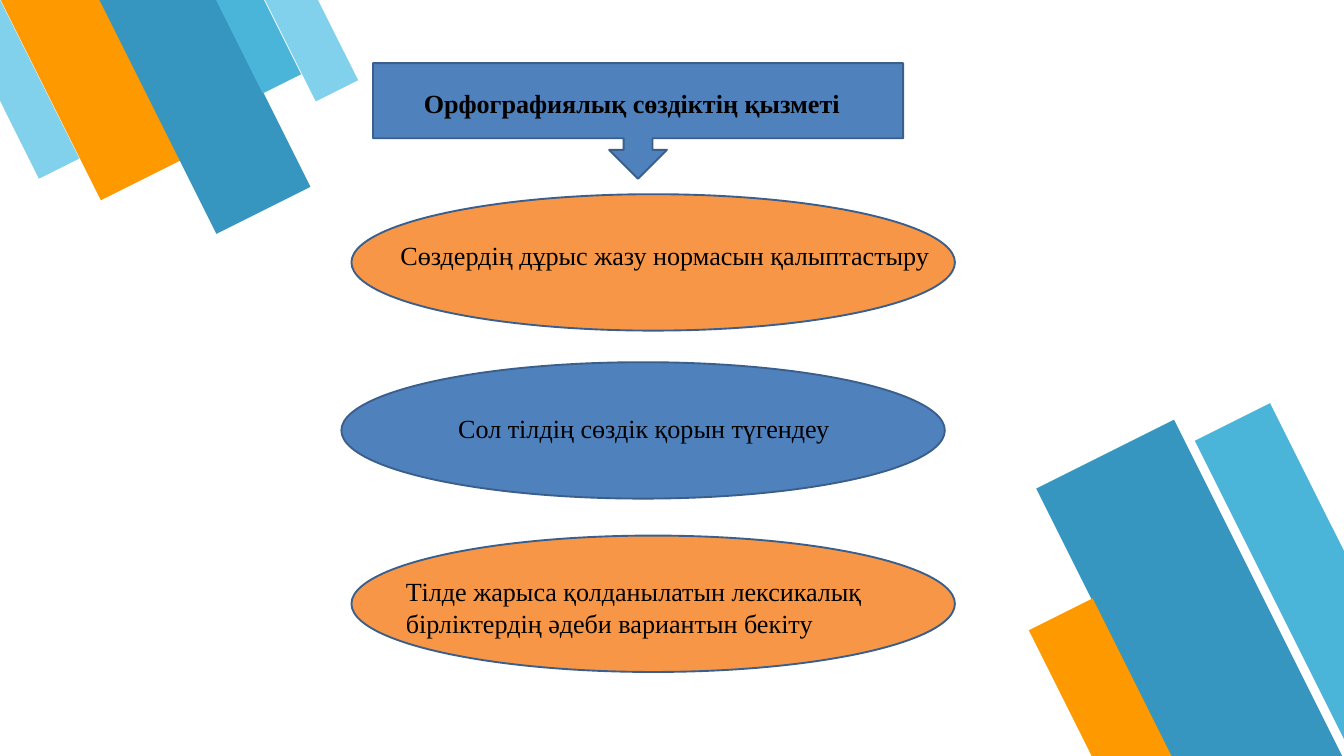
from pptx import Presentation
from pptx.dml.color import RGBColor
from pptx.enum.shapes import MSO_SHAPE as Preset
from pptx.enum.text import MSO_AUTO_SIZE as AutoSize, PP_ALIGN as Align
from pptx.util import Inches, Pt

COLUMNS, ROWS = 20, 11.25  # grid of square cells, one inch each
FONT = "Times New Roman"
BLUE, ORANGE, OUTLINE = "4F81BD", "F79646", "3A5F8C"
AMBER, PALE, TEAL, SKY = "FF9900", "81D1EC", "3796BF", "4BB5D9"

# Outer corner (column, row), columns across the end, colour
TOP_BARS = [
    (1.5, 2.98, 1.2, AMBER),
    (0.58, 2.66, 0.6, PALE),
    (3.22, 3.48, 1.4, TEAL),
    (3.91, 1.39, 0.57, SKY),
    (4.7, 1.51, 0.63, PALE),
]
BOTTOM_BARS = [
    (17.78, 6.56, 1.12, SKY),
    (15.42, 7.27, 2.05, TEAL),
    (15.31, 9.38, 0.95, AMBER),
]

# Ellipse box, colour, label box, label, wraps
DUTIES = [
    ((5.08, 5.39, 8.98, 2.03), BLUE, (6.72, 6.09, 5.78, 0.57),
     "Сол тілдің сөздік қорын түгендеу", False),
    ((5.23, 7.97, 8.98, 2.03), ORANGE, (5.94, 8.52, 8.44, 1.04),
     "Тілде жарыса қолданылатын лексикалық бірліктердің әдеби вариантын бекіту", True),
    ((5.23, 2.89, 8.98, 2.03), ORANGE, (5.86, 3.52, 8.15, 0.57),
     "Сөздердің дұрыс жазу нормасын қалыптастыру", False),
]


def color(value):
    return RGBColor.from_string(value)


def paint(shape, fill, outline=None):
    shape.shadow.inherit = False
    shape.fill.solid()
    shape.fill.fore_color.rgb = color(fill)
    if outline:
        shape.line.color.rgb = color(outline)
        shape.line.width = Pt(2)
    else:
        shape.line.fill.background()


def add_outlined(page, preset, box, fill):
    shape = page.shapes.add_shape(preset, *map(Inches, box))
    paint(shape, fill, OUTLINE)


def add_label(page, box, text, wrap=False, bold=False, align=Align.LEFT):
    frame = page.shapes.add_textbox(*map(Inches, box)).text_frame
    frame.text = text
    frame.word_wrap = wrap
    frame.auto_size = AutoSize.SHAPE_TO_FIT_TEXT
    para = frame.paragraphs[0]
    para.alignment = align
    font = para.runs[0].font
    font.name, font.size, font.bold = FONT, Pt(28), bold
    font.color.rgb = color("000000")


def add_heading(page, box):
    left, top, width, height = box
    add_outlined(page, Preset.DOWN_ARROW_CALLOUT, box, BLUE)
    add_label(page, (left + 0.62, top + 0.31, 6.46, 0.57),
              "Орфографиялық сөздіктің қызметі", bold=True, align=Align.CENTER)


def add_duty(page, box, fill, label_box, text, wrap):
    add_outlined(page, Preset.OVAL, box, fill)
    add_label(page, label_box, text, wrap)


def run_to_edge(column, row, toward):
    """Follow the slope of two rows per column up (-1) or down (1) to the page edge."""
    if toward < 0:
        run = min(column, row / 2)
    else:
        run = min(COLUMNS - column, (ROWS - row) / 2)
    return column + toward * run, row + toward * 2 * run


def add_bar(page, column, row, across, fill, toward):
    near, far = (column, row), (column + across, row - across / 2)
    corners = [near, far, run_to_edge(*far, toward), run_to_edge(*near, toward)]
    points = [(Inches(x), Inches(y)) for x, y in corners]
    builder = page.shapes.build_freeform(*points[0])
    builder.add_line_segments(points[1:], close=True)
    paint(builder.convert_to_shape(), fill)


def main():
    deck = Presentation()
    deck.slide_width, deck.slide_height = Inches(COLUMNS), Inches(ROWS)
    page = deck.slides.add_slide(deck.slide_layouts[6])
    for duty in DUTIES:
        add_duty(page, *duty)
    add_heading(page, (5.55, 0.94, 7.89, 1.72))
    for bars, toward in ((TOP_BARS, -1), (BOTTOM_BARS, 1)):
        for bar in bars:
            add_bar(page, *bar, toward)
    deck.save("out.pptx")


if __name__ == "__main__":
    main()
